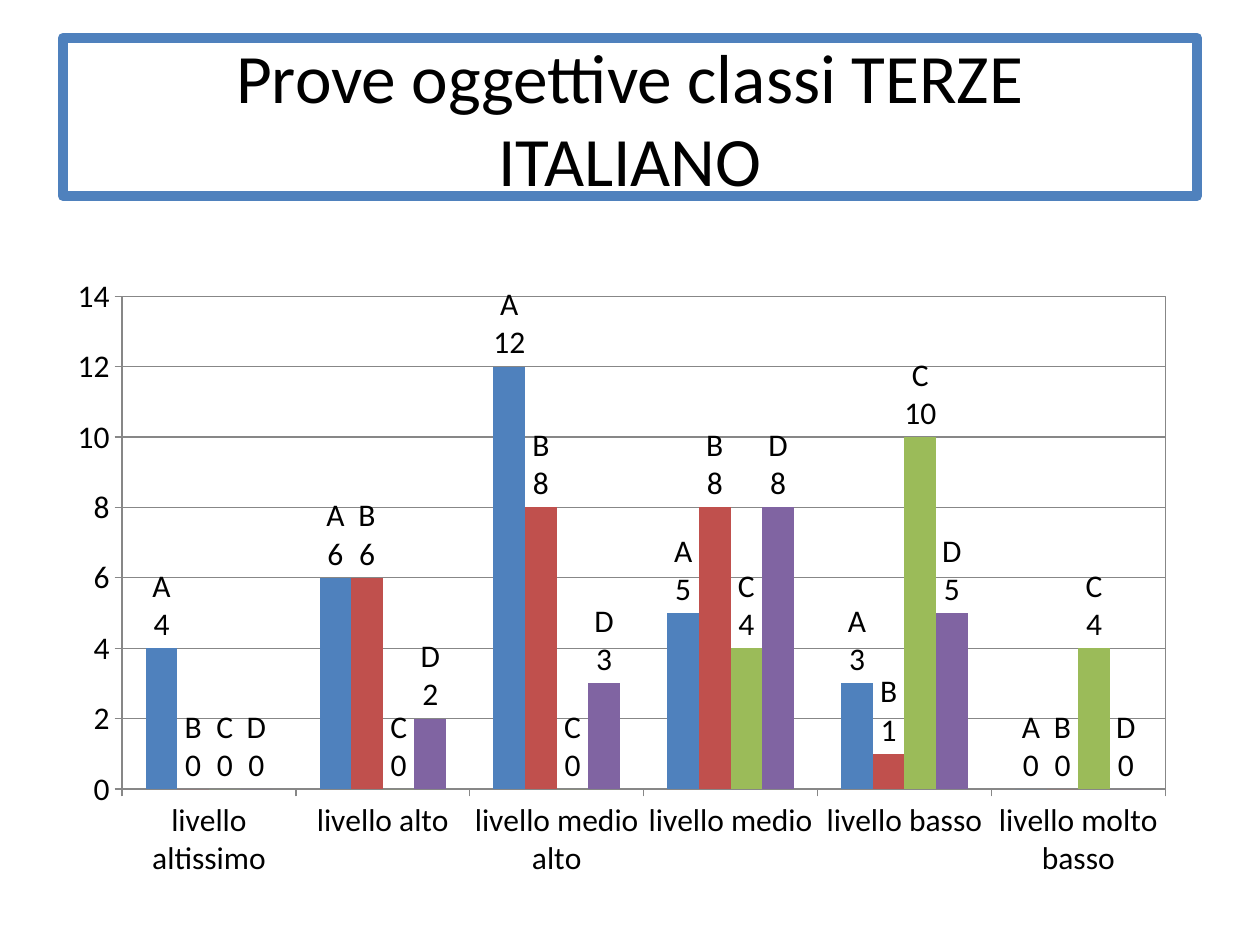
from dataclasses import dataclass

from lxml.etree import SubElement
from pptx import Presentation
from pptx.chart.data import CategoryChartData
from pptx.dml.color import RGBColor
from pptx.enum.chart import XL_CHART_TYPE, XL_LABEL_POSITION, XL_TICK_MARK
from pptx.enum.text import MSO_ANCHOR, MSO_AUTO_SIZE, PP_ALIGN
from pptx.oxml import parse_xml
from pptx.oxml.ns import nsdecls, qn
from pptx.util import Emu, Pt


@dataclass(frozen=True)
class Theme:
    """Colours, font and type sizes of the deck."""

    font: str = "Calibri"
    text: str = "000000"
    accent: str = "4F81BD"
    grid: str = "878787"
    series: tuple = ("4F81BD", "C0504D", "9BBB59", "8064A2")
    title_size: float = 39.6
    chart_size: float = 18


def px(length):
    """Turn whole pixels into EMU."""
    return Emu(round(length * 914400 / 126))


def format_text(text, frame, *, size, color, font, align):
    """Write text into a frame and format its first paragraph."""
    para = frame.paragraphs[0]
    para.text = text
    para.alignment = align
    para.font.size = Pt(size)
    para.font.name = font
    para.font.color.rgb = RGBColor.from_string(color)


class SlideBuilder:
    """Holds the theme and the current page."""

    def __init__(self, page, theme):
        """Keep the page and its theme."""
        self.page = page
        self.theme = theme

    def add_title(self, text, left, top, width, height):
        """Place the framed title."""
        box = self.page.shapes.title
        box.left, box.top, box.width, box.height = map(px, (left, top, width, height))
        box.fill.background()
        box.line.color.rgb = RGBColor.from_string(self.theme.accent)
        box.line.width = Pt(6)
        frame = box.text_frame
        frame.word_wrap = True
        frame.auto_size = MSO_AUTO_SIZE.NONE
        frame.vertical_anchor = MSO_ANCHOR.MIDDLE
        format_text(text, frame, size=self.theme.title_size, color=self.theme.text,
                    font=self.theme.font, align=PP_ALIGN.CENTER)

    def add_columns(self, categories, groups, left, top, width, height):
        """Add the clustered column chart."""
        data = CategoryChartData(number_format="General")
        data.categories = categories
        for name, values in groups.items():
            data.add_series(name, values)
        chart = self.page.shapes.add_chart(
            XL_CHART_TYPE.COLUMN_CLUSTERED, *map(px, (left, top, width, height)), data
        ).chart
        chart.has_title = False
        chart.has_legend = False
        chart.font.size = Pt(self.theme.chart_size)
        chart.font.name = self.theme.font
        chart.font.color.rgb = RGBColor.from_string(self.theme.text)
        plot = chart.plots[0]
        plot.gap_width = 150
        plot.overlap = 0
        plot.vary_by_categories = False
        for series, color in zip(plot.series, self.theme.series):
            series.format.fill.solid()
            series.format.fill.fore_color.rgb = RGBColor.from_string(color)
            self.label_series(series)
        self.style_axes(chart)
        self.frame_plot(chart, x=0.06, y=0.05, w=0.92, h=0.79)

    def label_series(self, series):
        """Show the series name above the value on each column."""
        labels = series.data_labels
        labels.show_series_name = True
        labels.show_value = True
        labels.position = XL_LABEL_POSITION.OUTSIDE_END
        element = labels._element
        separator = SubElement(element, qn("c:separator"))
        separator.text = "\n"
        element.find(qn("c:showBubbleSize")).addnext(separator)

    def style_axes(self, chart):
        """Set the scale, ticks and lines of both axes."""
        scale = chart.value_axis
        scale.minimum_scale, scale.maximum_scale, scale.major_unit = 0, 14, 2
        scale.has_major_gridlines = True
        lines = [scale.major_gridlines.format.line]
        for axis in (scale, chart.category_axis):
            axis.major_tick_mark = XL_TICK_MARK.OUTSIDE
            axis.minor_tick_mark = XL_TICK_MARK.NONE
            lines.append(axis.format.line)
        for line in lines:
            line.color.rgb = RGBColor.from_string(self.theme.grid)
            line.width = Pt(0.75)

    def frame_plot(self, chart, **place):
        """Fix the inner plot area and outline it."""
        area = chart._chartSpace.chart.plotArea
        for old in area.findall(qn("c:layout")):
            area.remove(old)
        modes = "".join(f'<c:{key}Mode val="edge"/>' for key in "xy")
        sizes = "".join(f'<c:{key} val="{value}"/>' for key, value in place.items())
        area.insert(0, parse_xml(
            f'<c:layout {nsdecls("c")}><c:manualLayout><c:layoutTarget val="inner"/>'
            f"{modes}{sizes}</c:manualLayout></c:layout>"))
        area.append(parse_xml(
            f'<c:spPr {nsdecls("c", "a")}><a:noFill/><a:ln w="9525"><a:solidFill>'
            f'<a:srgbClr val="{self.theme.grid}"/></a:solidFill></a:ln></c:spPr>'))


def main():
    """Build the slide and save the deck."""
    deck = Presentation()
    deck.slide_width, deck.slide_height = px(1260), px(945)
    page = deck.slides.add_slide(deck.slide_layouts[5])
    builder = SlideBuilder(page, Theme())
    builder.add_title("Prove oggettive classi TERZE\nITALIANO", 63, 38, 1134, 158)
    levels = ["altissimo", "alto", "medio alto", "medio", "basso", "molto basso"]
    results = {
        "A": (4, 6, 12, 5, 3, 0),
        "B": (0, 6, 8, 8, 1, 0),
        "C": (0, 0, 0, 4, 10, 4),
        "D": (0, 2, 3, 8, 5, 0),
    }
    builder.add_columns([f"livello {level}" for level in levels], results,
                        54, 265, 1134, 624)
    deck.save("out.pptx")


if __name__ == "__main__":
    main()
